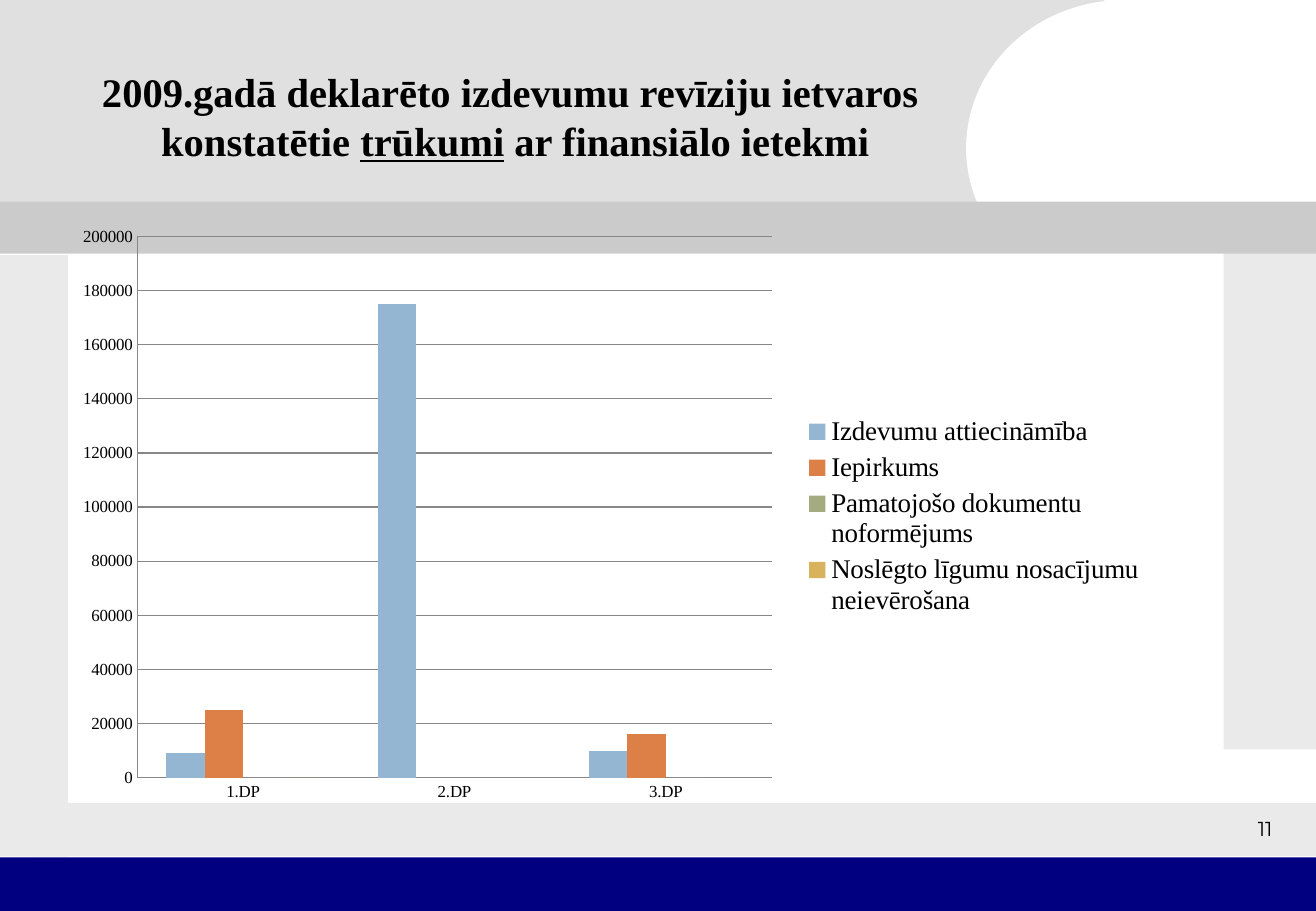
"""Builds the slide on shortcomings with financial impact found in 2009 audits."""
import pptx
import pptx.chart.data
import pptx.dml.color
import pptx.enum.chart
import pptx.enum.shapes
import pptx.enum.text
import pptx.oxml
import pptx.oxml.ns
import pptx.util

WIDTH, HEIGHT = pptx.util.Inches(10.83), pptx.util.Inches(7.5)
COLORS = {"header": "E0E0E0", "frame": "EAEAEA", "band": "CBCBCB", "white": "FFFFFF",
          "footer": "000080", "text": "000000", "grid": "878787"}
SHAPE = pptx.enum.shapes.MSO_SHAPE
ALIGN = pptx.enum.text.PP_ALIGN
ANCHOR = pptx.enum.text.MSO_ANCHOR
SERIF = "Times New Roman"

BACKDROP = [
    (SHAPE.RECTANGLE, "header", (0, 0, 83.93, 22.53)),
    (SHAPE.RECTANGLE, "frame", (0, 28, 5.17, 66)),
    (SHAPE.RECTANGLE, "frame", (2.4, 88.13, 97.6, 5.87)),
    (SHAPE.OVAL, "white", (73.41, 0, 24.01, 32.53)),
    (SHAPE.RECTANGLE, "footer", (0, 94.13, 100, 5.87)),
    (SHAPE.RECTANGLE, "frame", (92.98, 26.67, 7.02, 55.6)),
    (SHAPE.RECTANGLE, "band", (0, 22.13, 100, 5.73)),
]
CATEGORIES = ["1.DP", "2.DP", "3.DP"]
SERIES = [
    ("Izdevumu attiecināmība", "94B6D2", (9000, 175000, 10000)),
    ("Iepirkums", "DD8047", (25000, None, 16000)),
    ("Pamatojošo dokumentu noformējums", "A5AB81", (0, None, 0)),
    ("Noslēgto līgumu nosacījumu neievērošana", "D8B25C", (0, None, None)),
]


def rgb(value):
    """Return the colour for a hex string."""
    return pptx.dml.color.RGBColor.from_string(value)


def place(shares):
    """Turn percentages of the slide into left, top, width and height."""
    return [round(share * side / 100) for share, side in zip(shares, (WIDTH, HEIGHT) * 2)]


def style(font, size, **extra):
    """Set font attributes from format values."""
    for name, value in {"name": SERIF, "size": pptx.util.Pt(size), **extra}.items():
        setattr(font, name, value)
    font.color.rgb = rgb(COLORS["text"])


def add_block(s, kind, color, shares):
    """Add a plain filled shape."""
    sp = s.shapes.add_shape(kind, *place(shares))
    sp.shadow.inherit = False
    sp.fill.solid()
    sp.fill.fore_color.rgb = rgb(COLORS[color])
    sp.line.fill.background()


def add_text(s, shares, lines, size, align, anchor, **extra):
    """Add one paragraph of lines, each a list of (text, underline) runs."""
    tf = s.shapes.add_textbox(*place(shares)).text_frame
    tf.word_wrap, tf.vertical_anchor = True, anchor
    p = tf.paragraphs[0]
    p.alignment = align
    for i, line in enumerate(lines):
        if i:
            p.add_line_break()
        for text, underline in line:
            r = p.add_run()
            r.text = text
            style(r.font, size, underline=underline, **extra)


def set_layout(parent, position, x, y, w, h, inner=False):
    """Fix a chart part's position as shares of the chart."""
    for old in parent.findall(pptx.oxml.ns.qn("c:layout")):
        parent.remove(old)
    target = '<c:layoutTarget val="inner"/>' if inner else ""
    values = "".join(f'<c:{tag} val="{value}"/>'
                     for tag, value in zip("xywh", (x, y, w, h)))
    xml = (f'<c:layout {pptx.oxml.ns.nsdecls("c")}><c:manualLayout>{target}'
           f'<c:xMode val="edge"/><c:yMode val="edge"/>{values}'
           '</c:manualLayout></c:layout>')
    parent.insert(position, pptx.oxml.parse_xml(xml))


def style_axis(axis):
    """Hide tick marks and draw a thin grey axis line."""
    tick = pptx.enum.chart.XL_TICK_MARK.NONE
    for name in ("major_tick_mark", "minor_tick_mark"):
        setattr(axis, name, tick)
    axis.format.line.color.rgb = rgb(COLORS["grid"])
    style(axis.tick_labels.font, 10)


def add_columns(s, shares):
    """Add the clustered column chart with its legend."""
    data = pptx.chart.data.CategoryChartData(number_format="General")
    data.categories = CATEGORIES
    for name, _, values in SERIES:
        data.add_series(name, values)
    kind = pptx.enum.chart.XL_CHART_TYPE.COLUMN_CLUSTERED
    chart = s.shapes.add_chart(kind, *place(shares), data).chart
    chart.has_title = False
    style(chart.font, 10)
    plot = chart.plots[0]
    plot.gap_width, plot.overlap, plot.vary_by_categories = 150, 0, False
    for series, (_, color, _) in zip(plot.series, SERIES):
        series.format.fill.solid()
        series.format.fill.fore_color.rgb = rgb(color)
        series.invert_if_negative = False
    for axis in (chart.category_axis, chart.value_axis):
        style_axis(axis)
    axis = chart.value_axis
    for name, value in {"minimum_scale": 0, "maximum_scale": 200000,
                        "major_unit": 20000, "has_major_gridlines": True}.items():
        setattr(axis, name, value)
    axis.major_gridlines.format.line.color.rgb = rgb(COLORS["grid"])
    chart.has_legend = True
    legend = chart.legend
    legend.position = pptx.enum.chart.XL_LEGEND_POSITION.RIGHT
    legend.include_in_layout = False
    style(legend.font, 16)
    plot_area = plot._element.getparent()
    set_layout(plot_area, 0, 0.07, 0.04, 0.58, 0.9, inner=True)
    set_layout(legend._element, 1, 0.68, 0.33, 0.31, 0.35)


def main():
    """Build and save the slide."""
    prs = pptx.Presentation()
    prs.slide_width, prs.slide_height = WIDTH, HEIGHT
    s = prs.slides.add_slide(prs.slide_layouts[6])
    for kind, color, shares in BACKDROP:
        add_block(s, kind, color, shares)
    add_text(s, (76.73, 88.93, 20.87, 6.67), [[("11", False)]], 12,
             ALIGN.RIGHT, ANCHOR.TOP, name="Montserrat")
    title = [[("2009.gadā deklarēto izdevumu revīziju ietvaros ", False)],
             [("konstatētie ", False), ("trūkumi", True), (" ar finansiālo ietekmi", False)]]
    add_text(s, (4.99, 4.4, 68.33, 16.67), title, 24, ALIGN.CENTER, ANCHOR.MIDDLE, bold=True)
    add_columns(s, (4.62, 23.33, 83.1, 66))
    prs.save("out.pptx")


if __name__ == "__main__":
    main()
